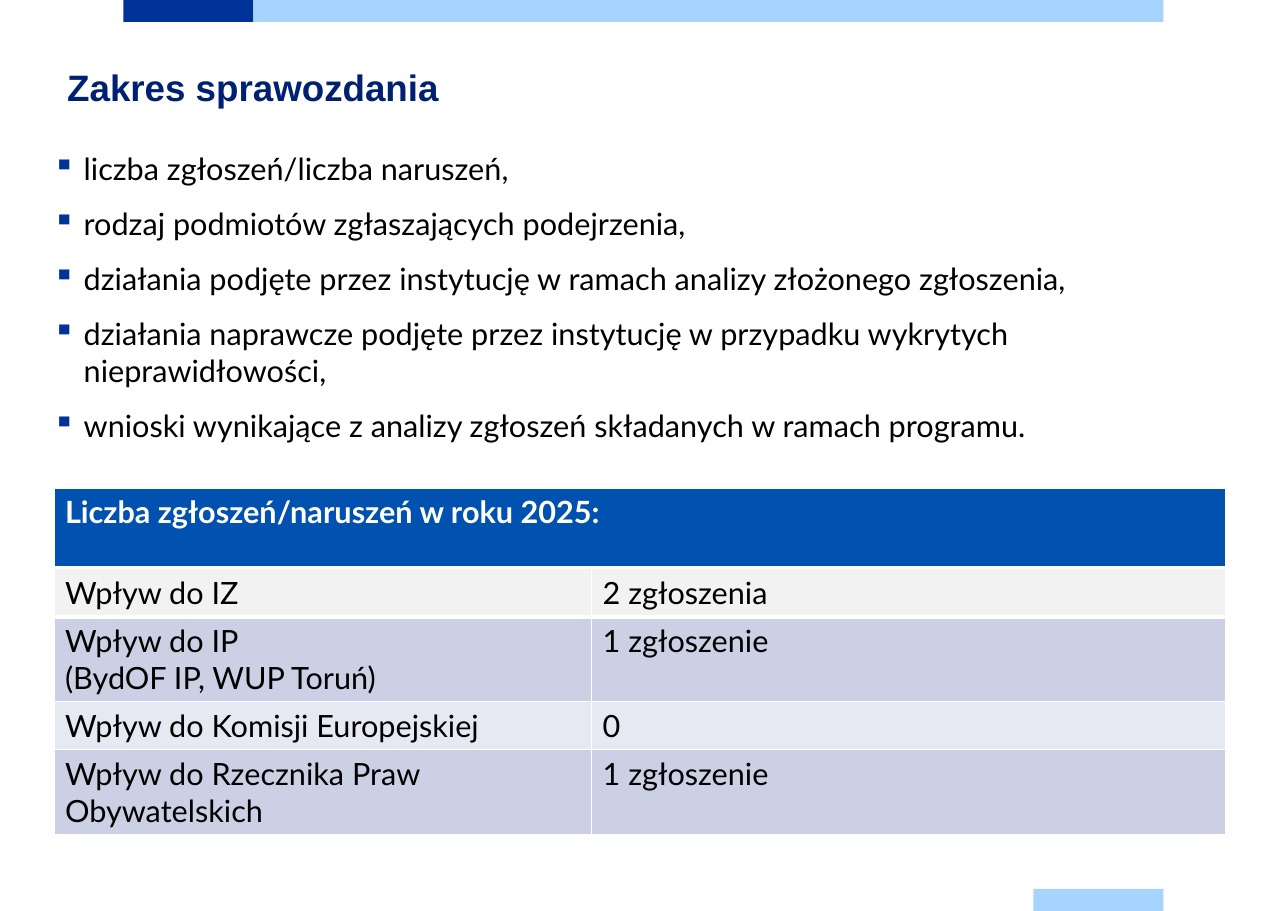
from lxml import etree
from pptx import Presentation
from pptx.dml.color import RGBColor
from pptx.enum.shapes import MSO_SHAPE
from pptx.enum.text import PP_ALIGN
from pptx.oxml.ns import qn
from pptx.util import Inches, Pt

RECTANGLE = MSO_SHAPE.RECTANGLE
LEFT, JUSTIFY = PP_ALIGN.LEFT, PP_ALIGN.JUSTIFY

# Content
TITLE = "Zakres sprawozdania"
BULLETS = [
    "liczba zgłoszeń/liczba naruszeń,",
    "rodzaj podmiotów zgłaszających podejrzenia,",
    "działania podjęte przez instytucję w ramach analizy złożonego zgłoszenia,",
    "działania naprawcze podjęte przez instytucję w przypadku wykrytych nieprawidłowości,",
    "wnioski wynikające z analizy zgłoszeń składanych w ramach programu.",
]
TABLE_HEADING = "Liczba zgłoszeń/naruszeń w roku 2025:"
REPORTS = [
    ("Wpływ do IZ", "2 zgłoszenia"),
    ("Wpływ do IP\v(BydOF IP, WUP Toruń)", "1 zgłoszenie"),
    ("Wpływ do Komisji Europejskiej", "0"),
    ("Wpływ do Rzecznika Praw Obywatelskich", "1 zgłoszenie"),
]

# Look and measures
NAVY, SKY, BLACK, WHITE = "003399", "A6D3FF", "000000", "FFFFFF"
HEADING_FILL = "0051B0"
REPORT_FILLS = ["F2F2F2", "CCD0E4", "E7E9F2", "CCD0E4"]
PAGE_WIDTH, PAGE_HEIGHT = 11.69, 8.27
BAR_HEIGHT, BAR_UNIT, BAR_LEFT = 0.2, 1.18, 1.12
BARS = [  # left, top, width, colour
    (BAR_LEFT, 0, BAR_UNIT, NAVY),
    (BAR_LEFT + BAR_UNIT, 0, 7 * BAR_UNIT, SKY),
    (BAR_LEFT + 7 * BAR_UNIT, PAGE_HEIGHT - BAR_HEIGHT, BAR_UNIT, SKY),
]
TABLE_LEFT, TABLE_TOP, HEADING_HEIGHT = 0.49, 4.43, 0.73
COLUMNS = [4.88, 5.75]
REPORT_HEIGHTS = [0.44, 0.76, 0.44, 0.76]


def colour(value):
    return RGBColor.from_string(value)


def add_bullet(para, tint):
    properties = para._p.get_or_add_pPr()
    properties.set("marL", str(Inches(0.28)))
    properties.set("indent", str(-Inches(0.28)))
    bullet_colour = etree.SubElement(properties, qn("a:buClr"))
    etree.SubElement(bullet_colour, qn("a:srgbClr"), val=tint)
    etree.SubElement(properties, qn("a:buChar"), char="▪")


def write(para, text, size=20, font="Lato", tint=BLACK, bold=False,
          align=LEFT, line=None, before=0, after=0, bullet=None):
    if bullet:
        add_bullet(para, bullet)
    para.text = text
    para.alignment = align
    para.space_before, para.space_after = Pt(before), Pt(after)
    if line:
        para.line_spacing = Pt(line)
    for span in para.runs:
        span.font.size, span.font.name, span.font.bold = Pt(size), font, bold
        span.font.color.rgb = colour(tint)


def add_text_box(left, top, width, height):
    box = page.shapes.add_textbox(*map(Inches, (left, top, width, height)))
    frame = box.text_frame
    frame.word_wrap = True
    frame.margin_left = frame.margin_top = frame.margin_right = frame.margin_bottom = 0
    return frame


def style_cell(cell, fill, bottom=1):
    properties = cell._tc.get_or_add_tcPr()
    for side, width in (("L", 1), ("R", 1), ("T", 1), ("B", bottom)):
        border = etree.SubElement(properties, qn(f"a:ln{side}"), w=str(Pt(width)))
        paint = etree.SubElement(border, qn("a:solidFill"))
        etree.SubElement(paint, qn("a:srgbClr"), val=WHITE)
    cell.fill.solid()
    cell.fill.fore_color.rgb = colour(fill)


def add_grid(top, widths, heights):
    table = page.shapes.add_table(
        len(heights), len(widths), Inches(TABLE_LEFT), Inches(top),
        Inches(sum(widths)), Inches(sum(heights))).table
    table.first_row = table.horz_banding = False
    for column, width in zip(table.columns, widths):
        column.width = Inches(width)
    for row, height in zip(table.rows, heights):
        row.height = Inches(height)
    return table


deck = Presentation()
deck.slide_width, deck.slide_height = Inches(PAGE_WIDTH), Inches(PAGE_HEIGHT)
page = deck.slides.add_slide(deck.slide_layouts[6])

# Edge bars
for left, top, width, tint in BARS:
    bar = page.shapes.add_shape(
        RECTANGLE, Inches(left), Inches(top), Inches(width), Inches(BAR_HEIGHT))
    bar.shadow.inherit = False
    bar.fill.solid()
    bar.fill.fore_color.rgb = colour(tint)
    bar.line.fill.background()

# Title and bullets
title = add_text_box(0.61, 0.49, 9.45, 1.02)
write(title.paragraphs[0], TITLE, size=24, font="Arial", tint="002073", bold=True, line=36)

body = add_text_box(0.48, 1.36, 10.55, 3.0)
for index, text in enumerate(BULLETS):
    para = body.add_paragraph() if index else body.paragraphs[0]
    write(para, text, line=24, before=6 if index else 0, after=6, bullet=NAVY)

# Table heading
heading = add_grid(TABLE_TOP, [sum(COLUMNS)], [HEADING_HEIGHT]).cell(0, 0)
style_cell(heading, HEADING_FILL, bottom=3)
write(heading.text_frame.paragraphs[0], TABLE_HEADING, tint=WHITE, bold=True, align=JUSTIFY)

# Table of reports
reports = add_grid(TABLE_TOP + HEADING_HEIGHT, COLUMNS, REPORT_HEIGHTS)
for row, (values, fill) in enumerate(zip(REPORTS, REPORT_FILLS)):
    for column, text in enumerate(values):
        cell = reports.cell(row, column)
        style_cell(cell, fill, bottom=1 if row else 3)
        write(cell.text_frame.paragraphs[0], text)

deck.save("out.pptx")
